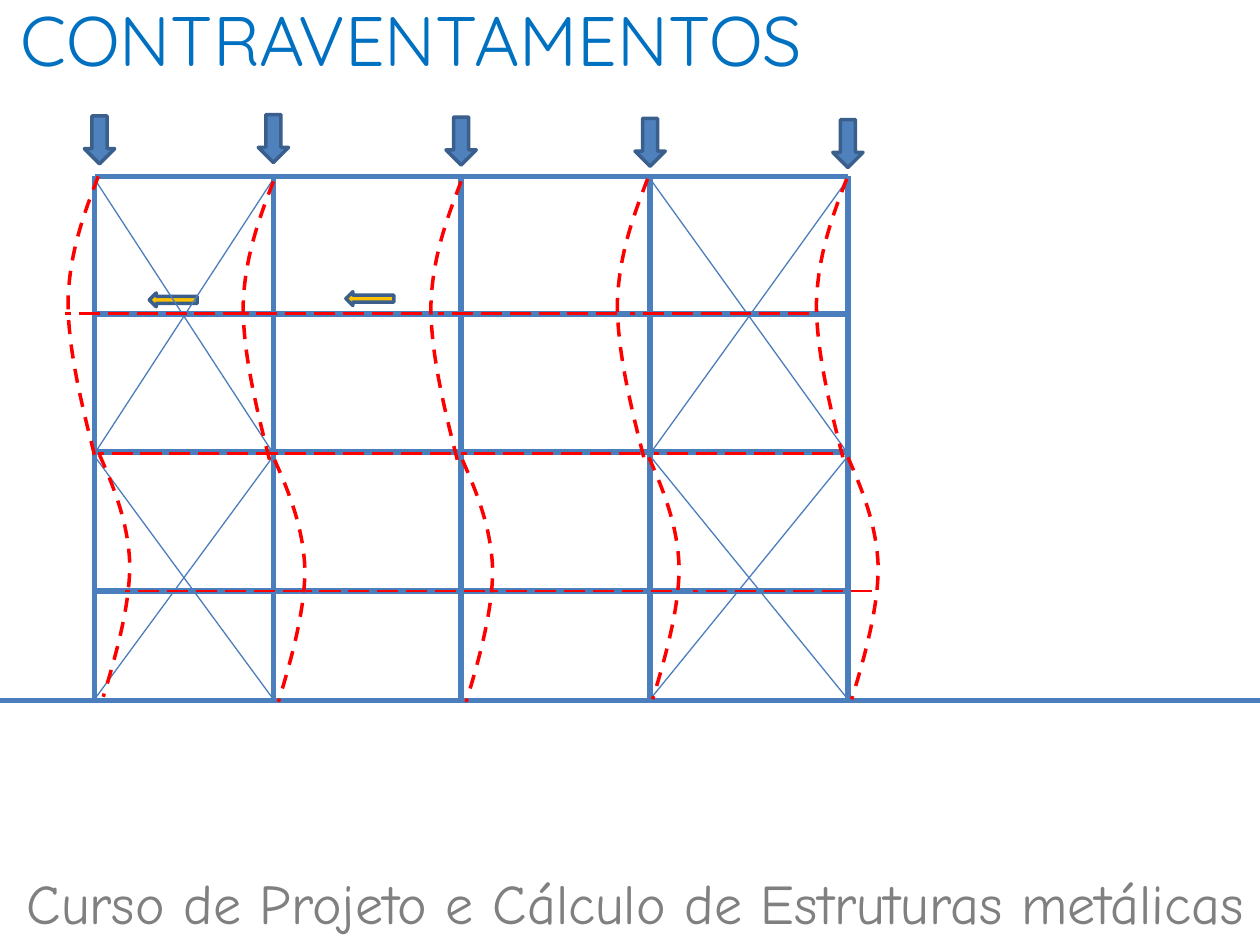
from pptx import Presentation
from pptx.dml.color import RGBColor
from pptx.enum.dml import MSO_LINE_DASH_STYLE as DASH
from pptx.enum.shapes import MSO_CONNECTOR, MSO_SHAPE
from pptx.enum.text import PP_ALIGN
from pptx.oxml.ns import qn
from pptx.util import Inches, Pt
from lxml.etree import SubElement

STEEL, ARROW_EDGE, RED = "4B7EBC", "3A5F8C", "FF0000"
COLUMNS = [0.75, 2.17, 3.66, 5.16, 6.73]
FLOORS = [1.4, 2.49, 3.59, 4.69]
GROUND = 5.56

deck = Presentation()
deck.slide_width, deck.slide_height = Inches(10), Inches(7.5)
page = deck.slides.add_slide(deck.slide_layouts[6])


def style_line(line, color, width, dash=None):
    line.color.rgb = RGBColor.from_string(color)
    line.width = Pt(width)
    if dash:
        line.dash_style = dash


def add_line(x1, y1, x2, y2, color, width, dash=None):
    ends = [Inches(value) for value in (x1, y1, x2, y2)]
    line = page.shapes.add_connector(MSO_CONNECTOR.STRAIGHT, *ends)
    style_line(line.line, color, width, dash)
    SubElement(line._element.spPr, qn("a:effectLst"))


# Course name and title
for left, top, width, height, words, size, font, color in [
    (-0.43, 6.84, 11.1, 0.64, "Curso de Projeto e Cálculo de Estruturas metálicas ",
     32, "Comic Neue", "808080"),
    (-1.54, -0.08, 9.61, 0.77, "CONTRAVENTAMENTOS", 40, "Quicksand", "0070C0"),
]:
    box = page.shapes.add_textbox(*map(Inches, (left, top, width, height)))
    box.text_frame.word_wrap = False
    box.text_frame.text = words
    para = box.text_frame.paragraphs[0]
    para.alignment = PP_ALIGN.CENTER
    span = para.runs[0]
    span.font.size, span.font.name = Pt(size), font
    span.font.color.rgb = RGBColor.from_string(color)

# Frame: columns, beams and ground
for x in COLUMNS:
    add_line(x, FLOORS[0], x, GROUND, STEEL, 3.25)
for y in FLOORS:
    add_line(COLUMNS[0], y, COLUMNS[-1], y, STEEL, 3.25)
add_line(0, GROUND, 10, GROUND, STEEL, 3.25)

# Loads on the columns and lateral forces
loads = [(left, top, 0.24, 0, "4F81BD") for left, top in
         zip((0.67, 2.05, 3.54, 5.04, 6.61), (0.92, 0.91, 0.93, 0.94, 0.95))]
forces = [(2.88, 2.18, 0.11, 90, "FFC000"), (1.32, 2.19, 0.11, 90, "FFC000")]
for left, top, width, turn, color in loads + forces:
    arrow = page.shapes.add_shape(
        MSO_SHAPE.DOWN_ARROW, *map(Inches, (left, top, width, 0.38)))
    arrow.rotation = turn
    arrow.shadow.inherit = False
    arrow.fill.solid()
    arrow.fill.fore_color.rgb = RGBColor.from_string(color)
    style_line(arrow.line, ARROW_EDGE, 2)

# Cross bracing, two storeys high, in the outer bays
for left, right in (COLUMNS[:2], COLUMNS[-2:]):
    for top, bottom in ((1.42, 3.6), (3.62, 5.55)):
        add_line(left, top, right, bottom, STEEL, 0.75)
        add_line(left, bottom, right, top, STEEL, 0.75)

# Buckled columns: Bézier points of each half, relative to its top
UPPER = [(-0.12, 0.31), (-0.23, 0.62), (-0.24, 0.99),
         (-0.24, 1.36), (-0.14, 1.78), (-0.03, 2.21)]
LOWER = [(0.12, 0.27), (0.23, 0.55), (0.24, 0.87),
         (0.24, 1.19), (0.14, 1.56), (0.03, 1.92)]
for x, y in [(0.78, 1.4), (2.17, 1.44), (3.66, 1.44), (5.14, 1.42), (6.72, 1.42)]:
    for controls, start_x, start_y in ((UPPER, x, y), (LOWER, x + 0.01, y + 2.21)):
        builder = page.shapes.build_freeform(Inches(start_x), Inches(start_y))
        builder.add_line_segments(
            [(Inches(start_x + dx), Inches(start_y + dy)) for dx, dy in controls],
            close=False)
        curve = builder.convert_to_shape()
        curve.shadow.inherit = False
        curve.fill.background()
        style_line(curve.line, RED, 2, DASH.DASH)

        # Join every three straight segments into one cubic segment
        segments = list(curve._element.iter(qn("a:lnTo")))
        outline = segments[0].getparent()
        for first in (0, 3):
            cubic = SubElement(outline, qn("a:cubicBezTo"))
            for segment in segments[first:first + 3]:
                cubic.append(segment[0])
                outline.remove(segment)

# Displaced beams, all of one length, drawn from right to left
BEAM = 1.42
for y, lefts in [(2.49, (0.52, 1.93, 3.48, 5)),
                 (3.6, (5.19, 3.66, 2.16, 0.78)),
                 (4.69, (0.99, 2.43, 3.91, 5.5))]:
    for left in lefts:
        add_line(left + BEAM, y, left, y, RED, 1.5, DASH.LONG_DASH)

deck.save("out.pptx")
